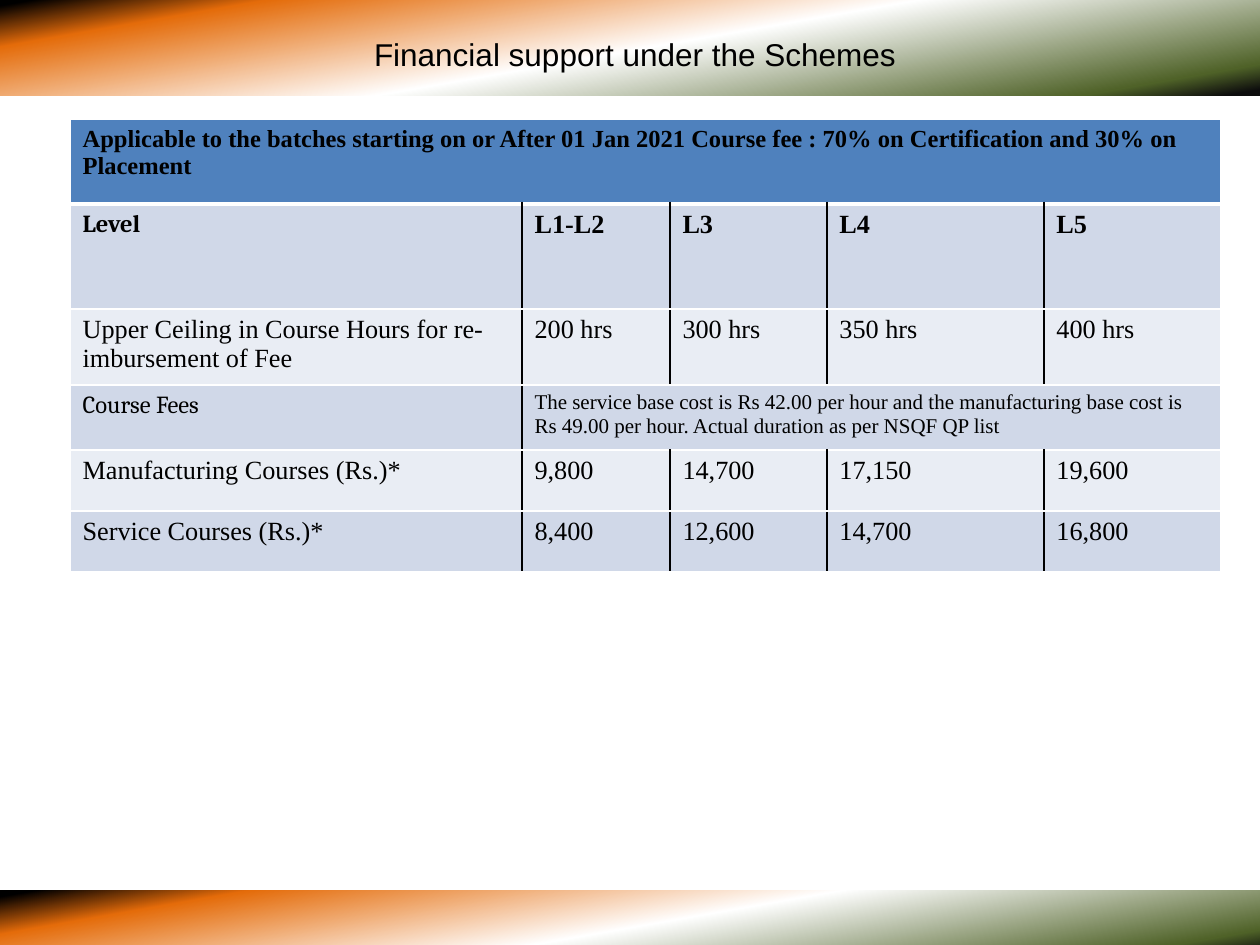
import pptx
import pptx.dml.color
import pptx.enum.shapes
import pptx.enum.text
import pptx.oxml
import pptx.oxml.ns
import pptx.util

EMU_PER_PX = 914400 // 126
SERIF = "Times New Roman"
BLACK, WHITE = "000000", "FFFFFF"
HEADER_FILL, DARK_BAND, LIGHT_BAND = "4F81BD", "D0D8E8", "E9EDF4"
FLAG_STOPS = [(2, "0D0D0D"), (10, "4F6228"), (49, WHITE), (85, "E46C0A"), (98, BLACK)]

COLUMN_WIDTHS = [452, 148, 157, 217, 177]
ROW_HEIGHTS = [85, 105, 76, 65, 61, 61]
ROWS = [
    ["Applicable to the batches starting on or After 01 Jan 2021 Course fee : "
     "70% on Certification and 30% on Placement"],
    ["Level", "L1-L2", "L3", "L4", "L5"],
    ["Upper Ceiling in Course Hours for re-imbursement of Fee",
     "200 hrs", "300 hrs", "350 hrs", "400 hrs"],
    ["Course Fees",
     "The service base cost is Rs 42.00 per hour and the manufacturing base cost is "
     "Rs 49.00 per hour. Actual duration as per NSQF QP list"],
    ["Manufacturing Courses (Rs.)*", "9,800", "14,700", "17,150", "19,600"],
    ["Service Courses (Rs.)*", "8,400", "12,600", "14,700", "16,800"],
]
# Cells whose type differs from 15 pt serif: (row, column) -> (size, font)
SPECIAL_TYPE = {(0, 0): (14, SERIF), (1, 0): (14, "Cambria"),
                (3, 0): (14, "Cambria"), (3, 1): (12, SERIF)}


def px(length):
    return pptx.util.Emu(length * EMU_PER_PX)


def color(value):
    return pptx.dml.color.RGBColor.from_string(value)


def xml(markup):
    return pptx.oxml.parse_xml(markup.replace(">", " " + pptx.oxml.ns.nsdecls("a") + ">", 1))


def add_run(paragraph, text, size, font, bold=False):
    run = paragraph.add_run()
    run.text = text
    run.font.size = pptx.util.Pt(size)
    run.font.name = font
    run.font.bold = bold
    run.font.color.rgb = color(BLACK)


def add_flag_band(slide, left, top, width, height):
    shape = slide.shapes.add_shape(
        pptx.enum.shapes.MSO_SHAPE.RECTANGLE, px(left), px(top), px(width), px(height))
    shape.shadow.inherit = False
    shape.line.fill.background()
    shape.fill.gradient()
    shape.fill.gradient_angle = 100
    # Replace the two default stops with the flag colours
    stops = shape._element.spPr.find(".//" + pptx.oxml.ns.qn("a:gsLst"))
    for stop in list(stops):
        stops.remove(stop)
    for position, value in FLAG_STOPS:
        stops.append(xml(f'<a:gs pos="{position * 1000}"><a:srgbClr val="{value}"/></a:gs>'))


def add_title(slide, text):
    box = slide.shapes.add_textbox(px(59), px(29), px(1152), px(50))
    box.text_frame.word_wrap = True
    paragraph = box.text_frame.paragraphs[0]
    paragraph.alignment = pptx.enum.text.PP_ALIGN.CENTER
    add_run(paragraph, text, 18, "Arial")


def set_borders(cell, borders):
    properties = cell._tc.get_or_add_tcPr()
    for index, (side, (value, points)) in enumerate(borders.items()):
        properties.insert(index, xml(
            f'<a:ln{side} w="{points * 12700}"><a:solidFill><a:srgbClr val="{value}"/>'
            f'</a:solidFill></a:ln{side}>'))


def cell_borders(row, first, last):
    """Black rules between columns, white elsewhere, heavy under the header."""
    return {
        "L": (WHITE if first == 0 else BLACK, 1),
        "R": (WHITE if last == len(COLUMN_WIDTHS) - 1 else BLACK, 1),
        "T": (WHITE, 3 if row == 1 else 1),
        "B": (WHITE, 3 if row == 0 else 1),
    }


def add_fee_table(slide, left, top):
    last_column = len(COLUMN_WIDTHS) - 1
    table = slide.shapes.add_table(
        len(ROWS), len(COLUMN_WIDTHS), px(left), px(top),
        px(sum(COLUMN_WIDTHS)), px(sum(ROW_HEIGHTS))).table
    table.first_row = False
    table.horz_banding = False
    for column, width in zip(table.columns, COLUMN_WIDTHS):
        column.width = px(width)

    for row, texts in enumerate(ROWS):
        table.rows[row].height = px(ROW_HEIGHTS[row])
        band = HEADER_FILL if row == 0 else DARK_BAND if row % 2 else LIGHT_BAND
        for cell in table.rows[row].cells:
            cell.fill.solid()
            cell.fill.fore_color.rgb = color(band)
        # The last text of a short row spans the remaining columns
        final = len(texts) - 1
        if final < last_column:
            table.cell(row, final).merge(table.cell(row, last_column))
        for column, text in enumerate(texts):
            cell = table.cell(row, column)
            size, font = SPECIAL_TYPE.get((row, column), (15, SERIF))
            add_run(cell.text_frame.paragraphs[0], text, size, font, bold=row < 2)
            end = last_column if column == final else column
            set_borders(cell, cell_borders(row, column, end))


def main():
    presentation = pptx.Presentation()
    presentation.slide_width = px(1260)
    presentation.slide_height = px(945)
    slide = presentation.slides.add_slide(presentation.slide_layouts[6])

    # Bands at the foot and head of the slide
    add_flag_band(slide, -2, 891, 1263, 68)
    add_flag_band(slide, 0, -1, 1262, 97)

    # Content
    add_fee_table(slide, 70, 119)
    add_title(slide, "Financial support under the Schemes")
    presentation.save("out.pptx")


if __name__ == "__main__":
    main()
